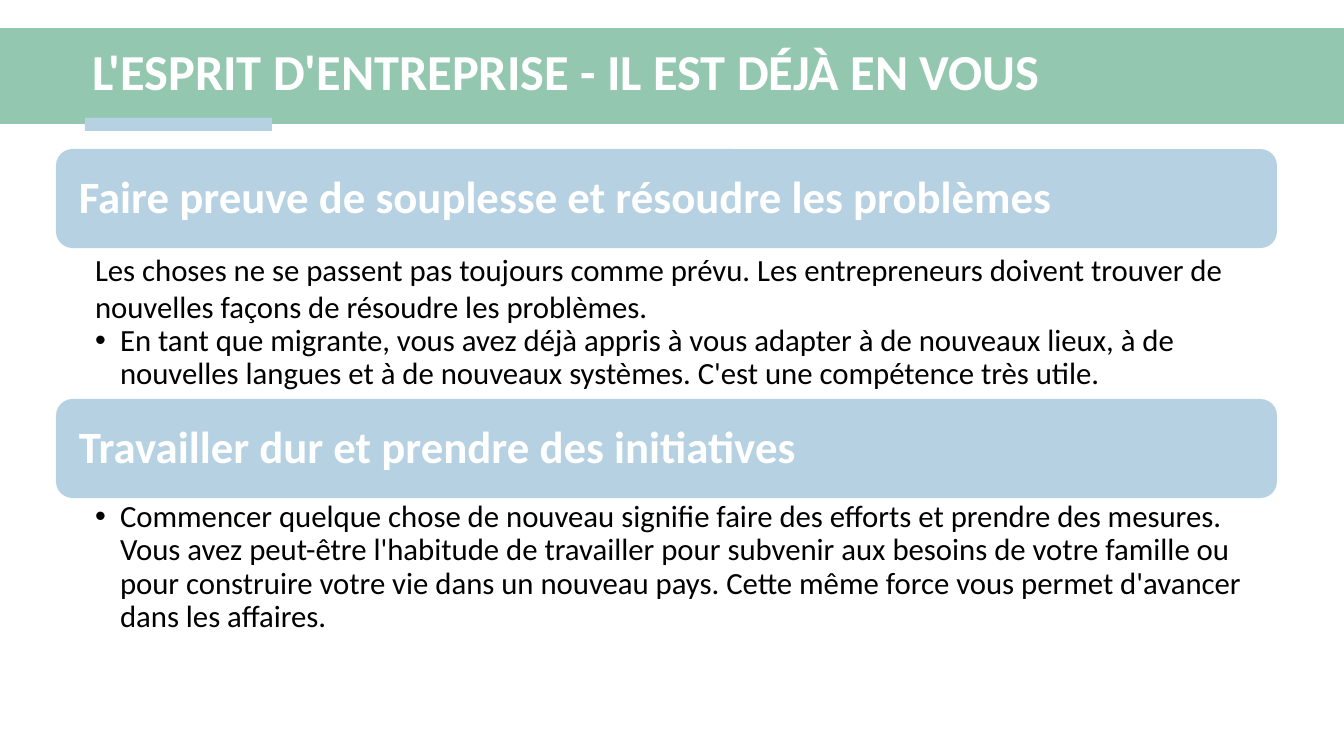
from dataclasses import dataclass
from typing import NamedTuple

from lxml.etree import SubElement
from pptx import Presentation
from pptx.dml.color import RGBColor
from pptx.enum.shapes import MSO_SHAPE as Shape
from pptx.enum.text import MSO_ANCHOR as Anchor, MSO_AUTO_SIZE as Fit, PP_ALIGN as Align
from pptx.oxml.ns import qn
from pptx.util import Pt


@dataclass(frozen=True)
class Theme:
    font: str = "Calibri"
    green: str = "94C7B0"
    blue: str = "B6D1E1"
    white: str = "FFFFFF"
    black: str = "000000"
    title: int = 36
    head: int = 32
    body: int = 22


class Box(NamedTuple):
    left: int
    top: int
    width: int
    height: int


class Para(NamedTuple):
    text: str
    bullet: bool = False
    lines: float = 0.9


class Card(NamedTuple):
    head: str
    body: list[Para]


THEME = Theme()
SCALE = 914400 / 100.8
WIDTH, HEIGHT = 1344, 756
LEFT, TOP, WIDE, HEAD, PITCH = 56, 149, 1221, 99, 250
INDENT = 25

TITLE = "L'ESPRIT D'ENTREPRISE - IL EST DÉJÀ EN VOUS"
CARDS = [
    Card("Faire preuve de souplesse et résoudre les problèmes", [
        Para("Les choses ne se passent pas toujours comme prévu. Les entrepreneurs doivent "
             "trouver de nouvelles façons de résoudre les problèmes.", lines=1.0),
        Para("En tant que migrante, vous avez déjà appris à vous adapter à de nouveaux lieux, "
             "à de nouvelles langues et à de nouveaux systèmes. C'est une compétence très utile.",
             bullet=True),
    ]),
    Card("Travailler dur et prendre des initiatives", [
        Para("Commencer quelque chose de nouveau signifie faire des efforts et prendre des "
             "mesures. Vous avez peut-être l'habitude de travailler pour subvenir aux besoins "
             "de votre famille ou pour construire votre vie dans un nouveau pays. Cette même "
             "force vous permet d'avancer dans les affaires.", bullet=True),
    ]),
]


def px(count: int) -> int:
    return round(count * SCALE)


def block(slide, box: Box, color: str, kind=Shape.RECTANGLE):
    shape = slide.shapes.add_shape(kind, *map(px, box))
    shape.shadow.inherit = False
    shape.fill.solid()
    shape.fill.fore_color.rgb = RGBColor.from_string(color)
    shape.line.fill.background()
    return shape


def mark(para) -> None:
    """Give a paragraph a hanging bullet."""
    props = para._p.get_or_add_pPr()
    props.set("marL", str(px(INDENT)))
    props.set("indent", str(-px(INDENT)))
    SubElement(props, qn("a:buFont"), typeface="Arial")
    SubElement(props, qn("a:buChar"), char="•")


def write(shape, paras: list[Para], *, size: int, color: str, bold: bool = False,
          anchor=Anchor.MIDDLE, inset: tuple[int, int, int, int] = (10, 5, 10, 5)) -> None:
    """Fill a shape with text; inset runs left, top, right, bottom."""
    frame = shape.text_frame
    frame.word_wrap = True
    frame.auto_size = Fit.NONE
    frame.vertical_anchor = anchor
    (frame.margin_left, frame.margin_top,
     frame.margin_right, frame.margin_bottom) = map(px, inset)
    for rank, item in enumerate(paras):
        para = frame.add_paragraph() if rank else frame.paragraphs[0]
        para.alignment = Align.LEFT
        para.line_spacing = item.lines
        if item.bullet:
            mark(para)
        run = para.add_run()
        run.text = item.text
        run.font.name = THEME.font
        run.font.size = Pt(size)
        run.font.bold = bold
        run.font.color.rgb = RGBColor.from_string(color)


def banner(slide) -> None:
    block(slide, Box(0, 28, WIDTH, 96), THEME.green)
    block(slide, Box(85, 118, 187, 13), THEME.blue)
    title = slide.shapes.title
    title.left, title.top, title.width, title.height = map(px, Box(83, 34, 1203, 80))
    title.element.getparent().append(title.element)  # bring in front of the band
    write(title, [Para(TITLE)], size=THEME.title, color=THEME.white, bold=True)


def panel(slide, card: Card, top: int) -> None:
    head = block(slide, Box(LEFT, top, WIDE, HEAD), THEME.blue, Shape.ROUNDED_RECTANGLE)
    write(head, [Para(card.head)], size=THEME.head, color=THEME.white, bold=True,
          inset=(18, 18, 18, 18))
    area = Box(LEFT, top + HEAD, WIDE, PITCH - HEAD)
    body = slide.shapes.add_textbox(*map(px, area))
    write(body, card.body, size=THEME.body, color=THEME.black, anchor=Anchor.TOP,
          inset=(39, 3, 17, 3))


def main() -> None:
    deck = Presentation()
    deck.slide_width, deck.slide_height = px(WIDTH), px(HEIGHT)
    slide = deck.slides.add_slide(deck.slide_layouts.get_by_name("Title Only"))
    banner(slide)
    for rank, card in enumerate(CARDS):
        panel(slide, card, TOP + rank * PITCH)
    deck.save("out.pptx")


if __name__ == "__main__":
    main()
